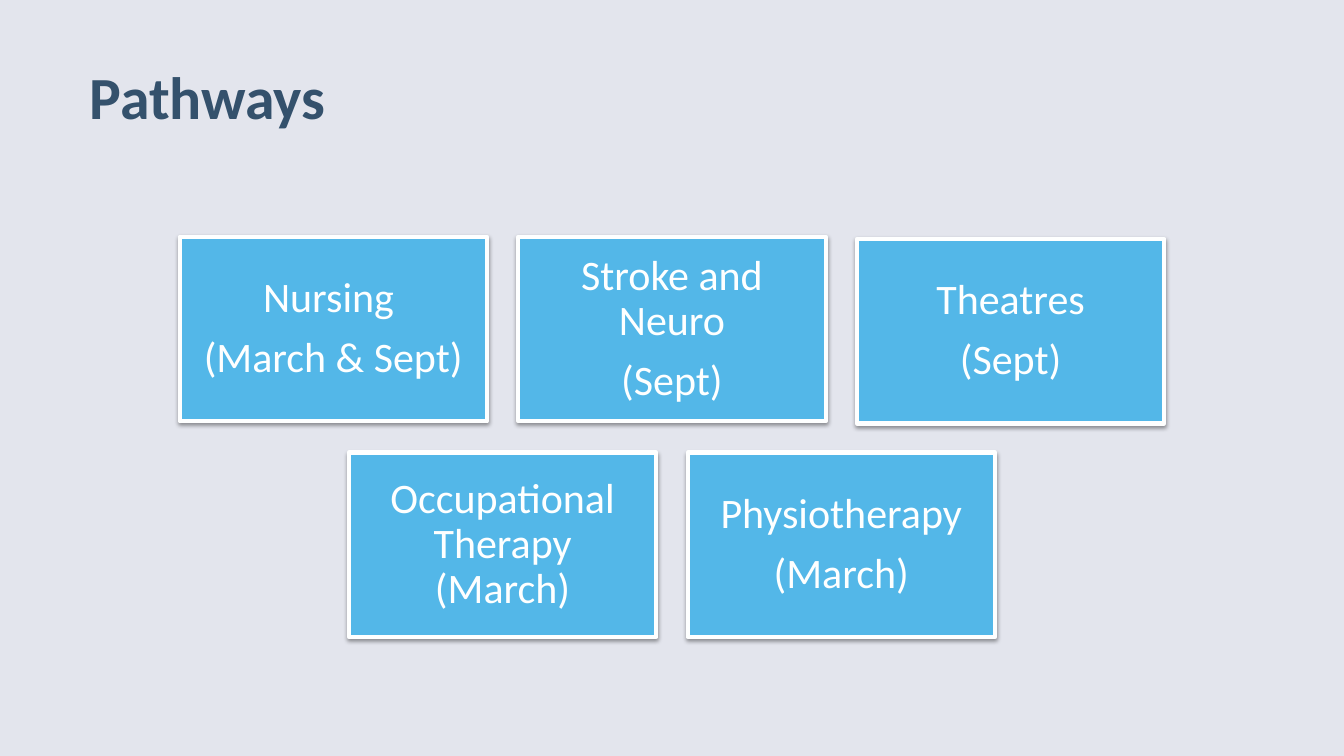
from lxml import etree
from pptx import Presentation
from pptx.dml.color import RGBColor
from pptx.enum.shapes import MSO_SHAPE as Shape
from pptx.enum.text import MSO_ANCHOR as Anchor, PP_ALIGN as Align
from pptx.oxml.ns import qn
from pptx.util import Pt

TITLE = "Pathways"
PATHWAY_ROWS = [
    [["Nursing ", "(March & Sept)"], ["Stroke and Neuro", "(Sept)"], ["Theatres", "(Sept)"]],
    [["Occupational Therapy (March)"], ["Physiotherapy", "(March)"]],
]
NUDGES = {"Theatres": 1.5}
PAGE_WIDTH, PAGE_HEIGHT = 960, 540
CARD_WIDTH, CARD_HEIGHT, GAP = 219.6, 131.8, 22.3
GRID_TOP = 169.2
BACKGROUND, NAVY, SKY, WHITE = "E3E5ED", "34516C", "53B7E8", "FEFFFF"


def paint(target, color):
    target.solid()
    target.fore_color.rgb = RGBColor.from_string(color)


def write(box, lines, size, color, bold=False, align=Align.LEFT,
          anchor=Anchor.MIDDLE, after=0, inset=0):
    frame = box.text_frame
    frame.word_wrap = True
    frame.vertical_anchor = anchor
    frame.margin_left = frame.margin_right = Pt(inset)
    frame.margin_top = frame.margin_bottom = Pt(inset)
    for index, line in enumerate(lines):
        para = frame.add_paragraph() if index else frame.paragraphs[0]
        para.alignment = align
        para.line_spacing = 0.9
        para.space_after = Pt(after)
        span = para.add_run()
        span.text = line
        span.font.name = "Calibri"
        span.font.size = Pt(size)
        span.font.bold = bold
        paint(span.font.fill, color)


def add_shadow(box):
    box.shadow.inherit = False
    effects = box._element.spPr.find(qn("a:effectLst"))
    shadow = etree.SubElement(effects, qn("a:outerShdw"), blurRad=str(Pt(3.1)),
                              dist=str(Pt(1.6)), dir="5400000", rotWithShape="0")
    shade = etree.SubElement(shadow, qn("a:srgbClr"), val="000000")
    etree.SubElement(shade, qn("a:alpha"), val="38000")


def add_card(page, left, top, lines):
    card = page.shapes.add_shape(Shape.RECTANGLE, Pt(left), Pt(top),
                                 Pt(CARD_WIDTH), Pt(CARD_HEIGHT))
    paint(card.fill, SKY)
    paint(card.line.fill, WHITE)
    card.line.width = Pt(3)
    add_shadow(card)
    write(card, lines, 30, WHITE, align=Align.CENTER, after=10.5, inset=9)


deck = Presentation()
deck.slide_width, deck.slide_height = Pt(PAGE_WIDTH), Pt(PAGE_HEIGHT)
page = deck.slides.add_slide(deck.slide_layouts[6])
paint(page.background.fill, BACKGROUND)

title = page.shapes.add_textbox(Pt(64), Pt(26.6), Pt(670.3), Pt(67.7))
write(title, [TITLE], 42.7, NAVY, bold=True, anchor=Anchor.BOTTOM, after=8)

for row, cards in enumerate(PATHWAY_ROWS):
    row_width = len(cards) * (CARD_WIDTH + GAP) - GAP
    row_left = (PAGE_WIDTH - row_width) / 2
    row_top = GRID_TOP + row * (CARD_HEIGHT + GAP)
    for column, lines in enumerate(cards):
        left = row_left + column * (CARD_WIDTH + GAP)
        add_card(page, left, row_top + NUDGES.get(lines[0], 0), lines)

deck.save("out.pptx")
